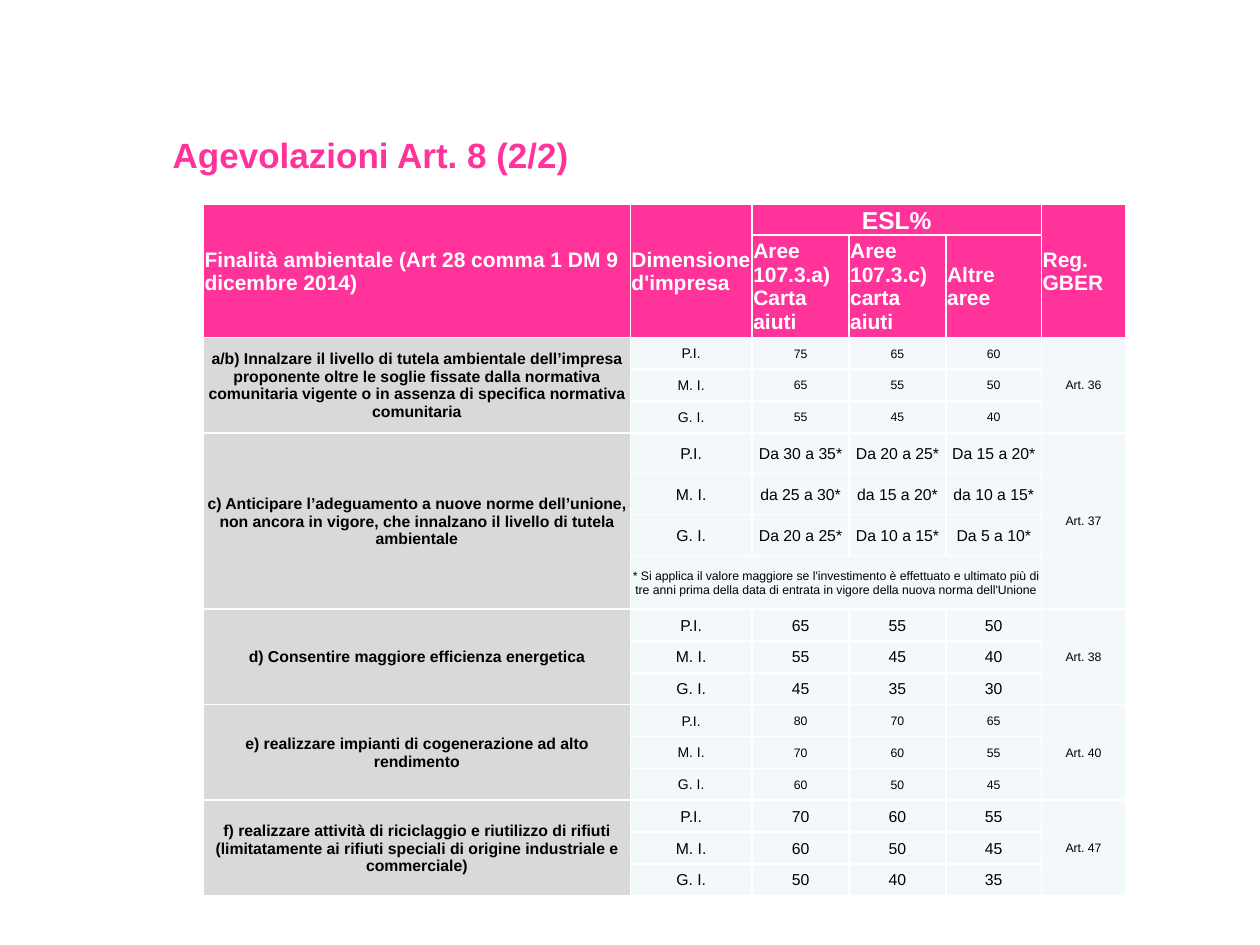
"""Build the slide with the table of aid rates by environmental purpose."""
from dataclasses import dataclass
from typing import Optional

from lxml.etree import SubElement
from pptx import Presentation
from pptx.dml.color import RGBColor as Color
from pptx.enum.text import MSO_ANCHOR as Anchor, PP_ALIGN as Align
from pptx.oxml.ns import qn
from pptx.slide import Slide
from pptx.table import Table, _Cell as Cell
from pptx.util import Pt


@dataclass(frozen=True)
class Theme:
    font: str = "Arial"
    accent: Color = Color(0xFF, 0x33, 0x99)
    purpose_fill: Color = Color(0xD9, 0xD9, 0xD9)
    body_fill: Color = Color(0xF3, 0xF9, 0xFA)
    white: Color = Color(0xFF, 0xFF, 0xFF)
    black: Color = Color(0, 0, 0)
    title: float = 20
    group_head: float = 14
    head: float = 12
    body: float = 9
    small: float = 8
    tiny: float = 7


@dataclass(frozen=True)
class Style:
    fill: Color
    color: Color
    size: float
    bold: bool = False
    align: Align = Align.CENTER


@dataclass(frozen=True)
class Heading:
    text: str
    row: int
    column: int
    rows: int = 1
    columns: int = 1


@dataclass(frozen=True)
class Purpose:
    text: str
    article: str
    rates: tuple[tuple[str, str, str], ...]
    compact: bool = False
    row_height: float = 18.2
    note: Optional[str] = None


THEME = Theme()
NOTE_HEIGHT = 30.6
HEADER_HEIGHTS = [16.2, 54.8]
COLUMN_WIDTHS = [244, 69.6, 55.4, 55.4, 54.6, 48]
SIZES = ["P.I.", "M. I.", "G. I."]
HEADINGS = [
    Heading("Finalità ambientale (Art 28 comma 1 DM 9 dicembre 2014)", 0, 0, rows=2),
    Heading("Dimensione d'impresa", 0, 1, rows=2),
    Heading("ESL%", 0, 2, columns=3),
    Heading("Reg. GBER", 0, 5, rows=2),
    Heading("Aree 107.3.a) Carta aiuti", 1, 2),
    Heading("Aree 107.3.c) carta aiuti", 1, 3),
    Heading("Altre aree", 1, 4),
]
PURPOSES = [
    Purpose("a/b) Innalzare il livello di tutela ambientale dell’impresa proponente oltre le "
            "soglie fissate dalla normativa comunitaria vigente o in assenza di specifica "
            "normativa comunitaria", "Art. 36",
            (("75", "65", "60"), ("65", "55", "50"), ("55", "45", "40")), compact=True),
    Purpose("c) Anticipare l’adeguamento a nuove norme dell’unione, non ancora in vigore, che "
            "innalzano il livello di tutela ambientale", "Art. 37",
            (("Da 30 a 35*", "Da 20 a 25*", "Da 15 a 20*"),
             ("da 25 a 30*", "da 15 a 20*", "da 10 a 15*"),
             ("Da 20 a 25*", "Da 10 a 15*", "Da 5 a 10*")), row_height=23.4,
            note="* Si applica il valore maggiore se l'investimento è effettuato e ultimato più "
                 "di tre anni prima della data di entrata in vigore della nuova norma dell'Unione"),
    Purpose("d) Consentire maggiore efficienza energetica", "Art. 38",
            (("65", "55", "50"), ("55", "45", "40"), ("45", "35", "30"))),
    Purpose("e) realizzare impianti di cogenerazione ad alto rendimento", "Art. 40",
            (("80", "70", "65"), ("70", "60", "55"), ("60", "50", "45")), compact=True),
    Purpose("f) realizzare attività di riciclaggio e riutilizzo di rifiuti (limitatamente ai "
            "rifiuti speciali di origine industriale e commerciale)", "Art. 47",
            (("70", "60", "55"), ("60", "50", "45"), ("50", "40", "35"))),
]


def apply(target: object, values: dict) -> None:
    """Set each attribute of the target from the given values."""
    for name, value in values.items():
        setattr(target, name, value)


def write(frame, text: str, style: Style) -> None:
    """Write one styled paragraph into a text frame."""
    para = frame.paragraphs[0]
    para.alignment = style.align
    span = para.add_run()
    span.text = text
    apply(span.font, {"name": THEME.font, "size": Pt(style.size), "bold": style.bold})
    span.font.color.rgb = style.color


def prepare(cell: Cell) -> None:
    """Give a cell its margins, white borders and plain fill."""
    apply(cell, {"margin_left": Pt(0.7), "margin_right": Pt(0.7), "margin_top": Pt(0.7),
                 "margin_bottom": Pt(0), "vertical_anchor": Anchor.MIDDLE})
    properties = cell._tc.get_or_add_tcPr()
    for side in ("L", "R", "T", "B"):
        line = SubElement(properties, qn(f"a:ln{side}"), w=str(Pt(1)))
        SubElement(SubElement(line, qn("a:solidFill")), qn("a:srgbClr"), val=str(THEME.white))
    cell.fill.solid()
    cell.fill.fore_color.rgb = THEME.body_fill


def fill_cell(table: Table, place: Heading, style: Style) -> None:
    """Merge the cells of a place, then fill and label them."""
    cell = table.cell(place.row, place.column)
    if place.rows * place.columns > 1:
        cell.merge(table.cell(place.row + place.rows - 1, place.column + place.columns - 1))
    cell.fill.fore_color.rgb = style.fill
    write(cell.text_frame, place.text, style)


def add_title(page: Slide, text: str) -> None:
    """Add the slide title."""
    box = page.shapes.add_textbox(Pt(20), Pt(71.3), Pt(618), Pt(51))
    apply(box.text_frame, {"word_wrap": True, "margin_left": Pt(78.7), "margin_top": Pt(5),
                           "vertical_anchor": Anchor.TOP})
    write(box.text_frame, text, Style(THEME.white, THEME.accent, THEME.title, True, Align.LEFT))


def add_purpose(table: Table, purpose: Purpose, top: int) -> int:
    """Fill the rows of one purpose and return the next free row."""
    rows = len(purpose.rates) + bool(purpose.note)
    label = Style(THEME.purpose_fill, THEME.black, THEME.body, True)
    tiny = Style(THEME.body_fill, THEME.black, THEME.tiny)
    size = Style(THEME.body_fill, THEME.black, THEME.small if purpose.compact else THEME.body)
    rate = tiny if purpose.compact else size
    fill_cell(table, Heading(purpose.text, top, 0, rows=rows), label)
    fill_cell(table, Heading(purpose.article, top, 5, rows=rows), tiny)
    for row, (name, rates) in enumerate(zip(SIZES, purpose.rates), top):
        fill_cell(table, Heading(name, row, 1), size)
        for column, text in enumerate(rates, 2):
            fill_cell(table, Heading(text, row, column), rate)
    if purpose.note:
        fill_cell(table, Heading(purpose.note, top + rows - 1, 1, columns=4), tiny)
    return top + rows


def add_rates(page: Slide) -> None:
    """Add the table of aid rates."""
    heights = list(HEADER_HEIGHTS)
    for purpose in PURPOSES:
        heights += [purpose.row_height] * len(purpose.rates)
        heights += [NOTE_HEIGHT] if purpose.note else []
    table = page.shapes.add_table(len(heights), len(COLUMN_WIDTHS), Pt(116.2), Pt(116.9),
                                  Pt(sum(COLUMN_WIDTHS)), Pt(sum(heights))).table
    apply(table, {"first_row": False, "horz_banding": False})
    for column, width in zip(table.columns, COLUMN_WIDTHS):
        column.width = Pt(width)
    for row, height in zip(table.rows, heights):
        row.height = Pt(height)
    for cell in table.iter_cells():
        prepare(cell)
    for heading in HEADINGS:
        grouped = heading.columns > 1
        fill_cell(table, heading, Style(
            THEME.accent, THEME.white, THEME.group_head if grouped else THEME.head, True,
            Align.CENTER if grouped else Align.LEFT))
    top = len(HEADER_HEIGHTS)
    for purpose in PURPOSES:
        top = add_purpose(table, purpose, top)


def main() -> None:
    """Build and save the deck."""
    deck = Presentation()
    apply(deck, {"slide_width": Pt(720), "slide_height": Pt(540)})
    page = deck.slides.add_slide(deck.slide_layouts[6])
    add_title(page, "Agevolazioni Art. 8 (2/2)")
    add_rates(page)
    deck.save("out.pptx")


if __name__ == "__main__":
    main()
